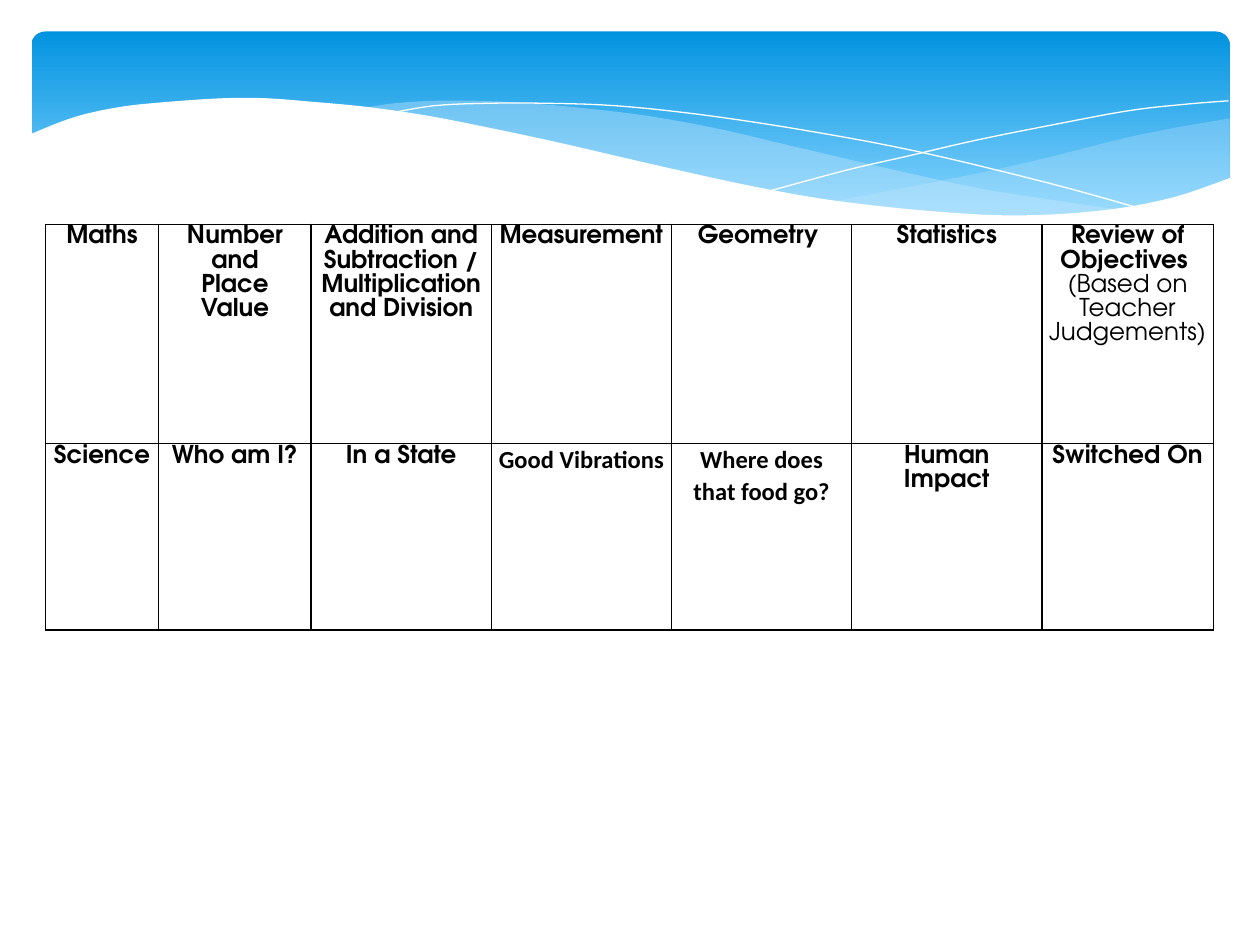
from lxml import etree
from pptx import Presentation
from pptx.dml.color import RGBColor
from pptx.enum.shapes import MSO_SHAPE
from pptx.enum.text import PP_ALIGN
from pptx.oxml.ns import qn
from pptx.util import Inches, Pt

BLACK = RGBColor(0x00, 0x00, 0x00)
WHITE = RGBColor(0xFF, 0xFF, 0xFF)
DEEP_BLUE = RGBColor(0x02, 0x93, 0xE0)
SKY_BLUE = RGBColor(0x83, 0xD3, 0xFE)
PALE_BLUE = RGBColor(0xC6, 0xE7, 0xFC)
HEADING_FONT = "TeX Gyre Adventor"
BODY_FONT = "Calibri"

# Table content: each cell is a list of paragraphs
ROWS = [
    [["Maths"], ["Number and", "Place Value"],
     ["Addition and Subtraction / Multiplication and Division"],
     ["Measurement "], ["Geometry "], ["Statistics"],
     ["Review of Objectives ", "(Based on Teacher Judgements)"]],
    [["Science "], ["Who am I?"], ["In a State"], ["Good Vibrations"],
     ["Where does that food go?"], ["Human Impact"], ["Switched On"]],
]
BODY_FONT_TEXTS = {"Good Vibrations", "Where does that food go?"}
REGULAR_TEXTS = {"(Based on Teacher Judgements)"}
COLUMN_WIDTHS = [0.9, 1.21, 1.43, 1.43, 1.43, 1.51, 1.36]
ROW_HEIGHTS = [1.74, 1.48]

# Wave edges, as points in inches that a smooth curve passes through
RIGHT_TOP = [(9.76, 0.94), (9.35, 1.01), (8.91, 1.1), (8.32, 1.25),
             (7.79, 1.37), (7.29, 1.47), (6.61, 1.6)]
RIGHT_BOTTOM = [(6.61, 1.6), (7.05, 1.65), (7.57, 1.7), (8.03, 1.72), (8.44, 1.71),
                (8.81, 1.67), (9.21, 1.6), (9.49, 1.52), (9.76, 1.41)]
MIDDLE_TOP = [(8.93, 1.67), (8.37, 1.59), (7.75, 1.49), (7.06, 1.34), (6.29, 1.16),
              (5.69, 1.02), (5.14, 0.92), (4.65, 0.86), (4.2, 0.82), (3.8, 0.8),
              (3.44, 0.8), (3.13, 0.82), (2.86, 0.86)]
MIDDLE_BOTTOM = [(2.86, 0.86), (3.42, 0.94), (4.04, 1.06), (4.49, 1.16), (5.3, 1.35),
                 (6.01, 1.5), (6.65, 1.61), (7.22, 1.68), (7.73, 1.72), (8.18, 1.73),
                 (8.57, 1.71), (8.93, 1.67)]
FALLING_LINE = [(3.09, 0.9), (3.44, 0.84), (3.87, 0.82), (4.33, 0.82), (4.89, 0.84),
                (5.56, 0.91), (6.36, 1.03), (7.27, 1.2), (8.31, 1.45), (9.07, 1.66)]
RISING_LINE = [(6.13, 1.51), (6.72, 1.35), (7.2, 1.24), (7.76, 1.11), (8.36, 0.99),
               (8.95, 0.88), (9.38, 0.83), (9.75, 0.8)]
PAGE_EDGE = [(9.77, 1.41), (9.3, 1.57), (8.75, 1.67), (8.09, 1.71), (7.44, 1.68),
             (6.68, 1.6), (6.03, 1.49), (5.29, 1.33), (4.47, 1.14), (3.91, 1.02),
             (3.4, 0.92), (2.92, 0.85), (2.5, 0.81), (2.11, 0.78), (1.77, 0.78),
             (1.32, 0.81), (0.95, 0.85), (0.59, 0.93), (0.23, 1.07)]
PAGE_CORNERS = [(0.23, 2.24), (9.77, 2.24)]


def smooth(points, steps=5):
    """Return points along a Catmull-Rom curve through the given points."""
    padded = [points[0], *points, points[-1]]
    curve = [points[0]]
    for a, b, c, d in zip(padded, padded[1:], padded[2:], padded[3:]):
        for step in range(1, steps + 1):
            t = step / steps
            curve.append(tuple(
                0.5 * (2 * q + (r - p) * t + (2 * p - 5 * q + 4 * r - s) * t ** 2
                       + (3 * q - p - 3 * r + s) * t ** 3)
                for p, q, r, s in zip(a, b, c, d)))
    return curve


def add_outline(slide, points, close):
    start, *others = [(Inches(x), Inches(y)) for x, y in points]
    builder = slide.shapes.build_freeform(*start)
    builder.add_line_segments(others, close=close)
    shape = builder.convert_to_shape()
    shape.shadow.inherit = False
    return shape


def add_area(slide, points, color, opacity=100):
    shape = add_outline(slide, points, True)
    shape.line.fill.background()
    shape.fill.solid()
    shape.fill.fore_color.rgb = color
    if opacity < 100:
        color_element = shape.fill._xPr.find(qn("a:solidFill"))[0]
        etree.SubElement(color_element, qn("a:alpha"), val=str(opacity * 1000))


def add_curve(slide, points):
    shape = add_outline(slide, smooth(points), False)
    shape.fill.background()
    shape.line.color.rgb = WHITE
    shape.line.width = Pt(0)


def add_banner(slide):
    banner = slide.shapes.add_shape(MSO_SHAPE.ROUNDED_RECTANGLE, Inches(0.25),
                                    Inches(0.25), Inches(9.51), Inches(1.56))
    banner.adjustments[0] = 0.07
    banner.shadow.inherit = False
    banner.line.fill.background()
    banner.fill.gradient()
    banner.fill.gradient_angle = 270
    for stop, color, position in zip(banner.fill.gradient_stops,
                                     (DEEP_BLUE, SKY_BLUE), (0, 0.9)):
        stop.color.rgb = color
        stop.position = position

    add_area(slide, smooth(RIGHT_TOP) + smooth(RIGHT_BOTTOM), PALE_BLUE, 29)
    add_area(slide, smooth(MIDDLE_TOP) + smooth(MIDDLE_BOTTOM), PALE_BLUE, 40)
    add_curve(slide, FALLING_LINE)
    add_curve(slide, RISING_LINE)
    add_area(slide, smooth(PAGE_EDGE) + PAGE_CORNERS, WHITE)


def set_borders(cell):
    properties = cell._tc.get_or_add_tcPr()
    for side in ("lnL", "lnR", "lnT", "lnB"):
        border = etree.SubElement(properties, qn(f"a:{side}"), w=str(Pt(1)))
        fill = etree.SubElement(border, qn("a:solidFill"))
        etree.SubElement(fill, qn("a:srgbClr"), val=str(BLACK))


def fill_cell(cell, texts):
    cell.margin_left = cell.margin_right = Inches(0.05)
    cell.margin_top = cell.margin_bottom = 0
    set_borders(cell)
    cell.fill.background()
    cell.text = "\n".join(texts)
    for paragraph, text in zip(cell.text_frame.paragraphs, texts):
        paragraph.alignment = PP_ALIGN.CENTER
        paragraph.line_spacing = 1.07
        font = paragraph.font
        font.name = BODY_FONT if text in BODY_FONT_TEXTS else HEADING_FONT
        font.size = Pt(14)
        font.bold = text not in REGULAR_TEXTS
        font.color.rgb = BLACK


def add_subject_table(slide):
    table = slide.shapes.add_table(
        len(ROWS), len(COLUMN_WIDTHS), Inches(0.36), Inches(1.78),
        Inches(sum(COLUMN_WIDTHS)), Inches(sum(ROW_HEIGHTS))).table
    table.first_row = table.horz_banding = False
    for column, width in zip(table.columns, COLUMN_WIDTHS):
        column.width = Inches(width)
    for row, height, contents in zip(table.rows, ROW_HEIGHTS, ROWS):
        row.height = Inches(height)
        for cell, texts in zip(row.cells, contents):
            fill_cell(cell, texts)


def main():
    presentation = Presentation()
    presentation.slide_width = Inches(10)
    presentation.slide_height = Inches(7.5)
    slide = presentation.slides.add_slide(presentation.slide_layouts[6])
    add_banner(slide)
    add_subject_table(slide)
    presentation.save("out.pptx")


if __name__ == "__main__":
    main()
